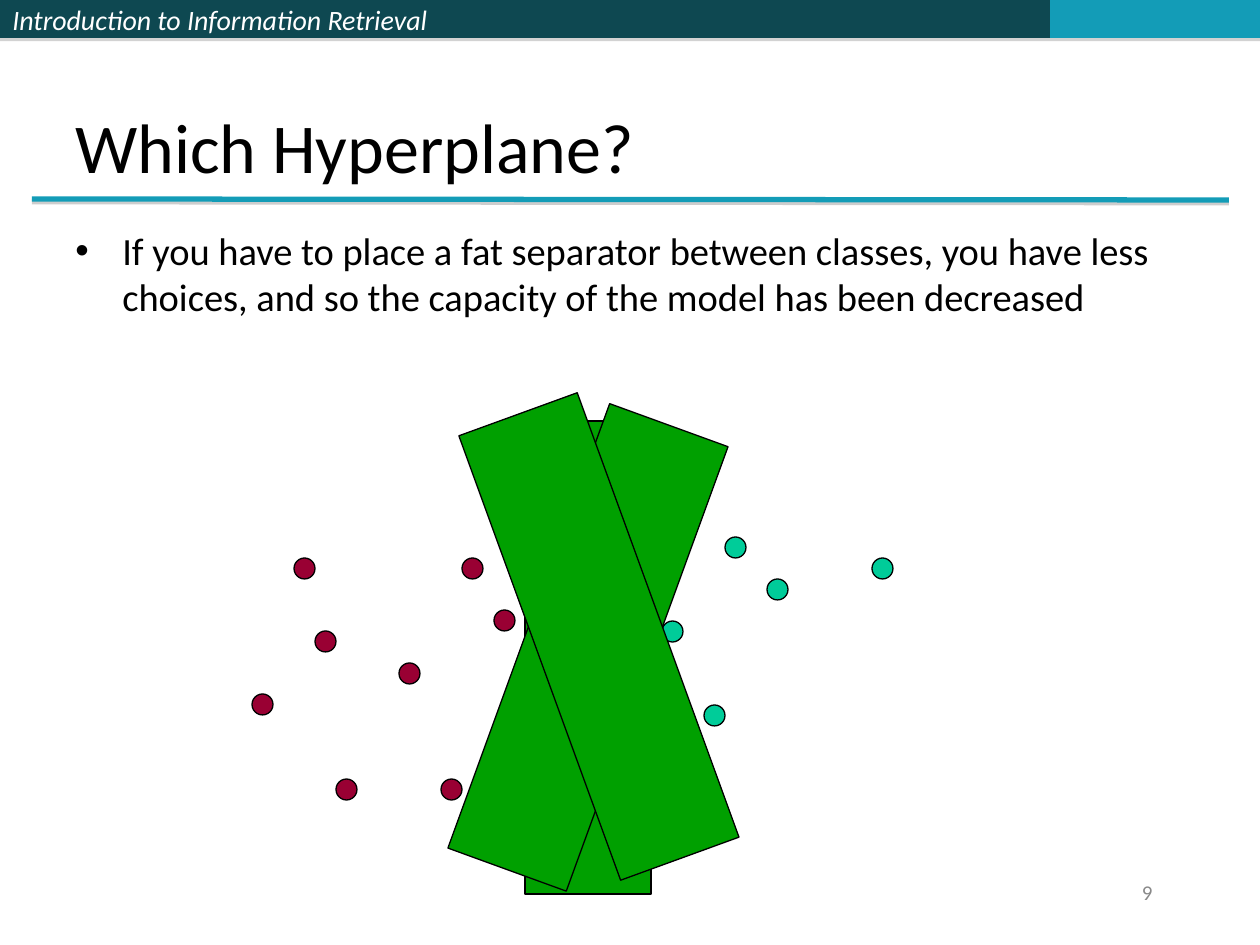
from typing import NamedTuple, Optional

from lxml.etree import SubElement
from pptx import Presentation
from pptx.dml.color import RGBColor
from pptx.enum.shapes import MSO_CONNECTOR, MSO_SHAPE
from pptx.enum.text import MSO_ANCHOR, PP_ALIGN
from pptx.oxml.ns import qn
from pptx.util import Pt

SCALE = 914400 / 126  # EMU in one px

BLACK = RGBColor(0x00, 0x00, 0x00)
WHITE = RGBColor(0xFF, 0xFF, 0xFF)
GRAY = RGBColor(0x89, 0x89, 0x89)
DARK = RGBColor(0x0E, 0x48, 0x51)
TEAL = RGBColor(0x13, 0x9C, 0xB7)
RED = RGBColor(0x99, 0x00, 0x33)
MINT = RGBColor(0x00, 0xCC, 0x99)
GREEN = RGBColor(0x00, 0xA0, 0x00)


class Box(NamedTuple):
    left: int
    top: int
    width: int
    height: int


class Bar(NamedTuple):
    box: Box
    color: RGBColor


class Dot(NamedTuple):
    left: int
    top: int
    color: RGBColor


class Slab(NamedTuple):
    left: int
    top: int
    turn: int


class Label(NamedTuple):
    text: str
    box: Box
    font: dict
    color: RGBColor
    frame: dict
    para: dict


BARS = [
    Bar(Box(0, 0, 514, 38), DARK),
    Bar(Box(514, 0, 536, 38), DARK),
    Bar(Box(1050, 0, 210, 38), TEAL),
]

DOT = 21  # diameter
DOTS = [Dot(x, y, RED) for x, y in (
    (294, 558), (315, 631), (336, 779), (462, 558),
    (252, 694), (399, 663), (494, 610), (441, 779))]
DOTS += [Dot(x, y, MINT) for x, y in (
    (662, 621), (704, 705), (725, 537), (872, 558), (767, 579))]

SLABS = [Slab(525, 421, 0), Slab(525, 411, 20), Slab(536, 400, 340)]

HEAD = Label("Introduction to Information Retrieval", BARS[0].box,
             {"size": Pt(16), "italic": True}, WHITE,
             {"vertical_anchor": MSO_ANCHOR.MIDDLE},
             {"alignment": PP_ALIGN.LEFT})
TITLE = Label("Which Hyperplane?", Box(63, 14, 1133, 180),
              {"size": Pt(40)}, BLACK,
              {"vertical_anchor": MSO_ANCHOR.BOTTOM}, {})
BODY = Label("If you have to place a fat separator between classes, you have "
             "less choices, and so the capacity of the model has been "
             "decreased", Box(63, 221, 1133, 672),
             {"size": Pt(22)}, BLACK,
             {"vertical_anchor": MSO_ANCHOR.TOP}, {"space_before": Pt(7)})
PAGE = Label("9", Box(903, 861, 262, 63), {"size": Pt(12)}, GRAY,
             {"vertical_anchor": MSO_ANCHOR.MIDDLE},
             {"alignment": PP_ALIGN.RIGHT})


def emu(*nums: int) -> list[int]:
    return [round(num * SCALE) for num in nums]


def style(item, **vals) -> None:
    for key, val in vals.items():
        setattr(item, key, val)


def shade(shape, alpha: int = 0, dist: float = 0) -> None:
    """Replace the theme effect by none, or by a hard shadow below."""
    props = shape._element.spPr
    for old in props.findall(qn("a:effectLst")):
        props.remove(old)
    fx = SubElement(props, qn("a:effectLst"))
    if alpha:
        cast = SubElement(fx, qn("a:outerShdw"), blurRad="0",
                          dist=str(Pt(dist)), dir="5400000", rotWithShape="0")
        tint = SubElement(cast, qn("a:srgbClr"), val="808080")
        SubElement(tint, qn("a:alpha"), val=str(alpha * 1000))


def draw(slide, kind: MSO_SHAPE, box: Box, fill: RGBColor,
         edge: Optional[RGBColor] = None, turn: int = 0):
    shape = slide.shapes.add_shape(kind, *emu(*box))
    shape.fill.solid()
    shape.fill.fore_color.rgb = fill
    if edge is None:
        shape.line.fill.background()
    else:
        shape.line.color.rgb = edge
        shape.line.width = Pt(0.75)
    shape.rotation = turn
    shade(shape)
    return shape


def write(shape, label: Label):
    frame = shape.text_frame
    style(frame, word_wrap=True, **label.frame)
    para = frame.paragraphs[0]
    style(para, **label.para)
    run = para.add_run()
    run.text = label.text
    style(run.font, name="Calibri", **label.font)
    run.font.color.rgb = label.color
    return para


def place(slide, label: Label):
    return write(slide.shapes.add_textbox(*emu(*label.box)), label)


def bullet(para, hang: int) -> None:
    props = para._p.get_or_add_pPr()
    gap = emu(hang)[0]
    props.set("marL", str(gap))
    props.set("indent", str(-gap))
    SubElement(props, qn("a:buFont"), typeface="Arial")
    SubElement(props, qn("a:buChar"), char="•")


def main() -> None:
    deck = Presentation()
    deck.slide_width, deck.slide_height = emu(1260, 945)
    slide = deck.slides.add_slide(deck.slide_layouts[6])

    # Header band
    bars = [draw(slide, MSO_SHAPE.RECTANGLE, bar.box, bar.color)
            for bar in BARS]
    for bar in bars:
        shade(bar, 35, 1.8)
    write(bars[0], HEAD)

    # Rule under the title
    rule = slide.shapes.add_connector(
        MSO_CONNECTOR.STRAIGHT, *emu(32, 199, 1229, 200))
    rule.line.color.rgb = TEAL
    rule.line.width = Pt(3)
    shade(rule, 38, 1.6)

    # Page number and bullet
    place(slide, PAGE)
    bullet(place(slide, BODY), 47)

    # Two classes of points
    for dot in DOTS:
        draw(slide, MSO_SHAPE.OVAL, Box(dot.left, dot.top, DOT, DOT),
             dot.color, BLACK)

    # Fat separators
    for slab in SLABS:
        draw(slide, MSO_SHAPE.RECTANGLE, Box(slab.left, slab.top, 126, 473),
             GREEN, BLACK, slab.turn)

    # Title
    place(slide, TITLE)

    deck.save("out.pptx")


if __name__ == "__main__":
    main()
